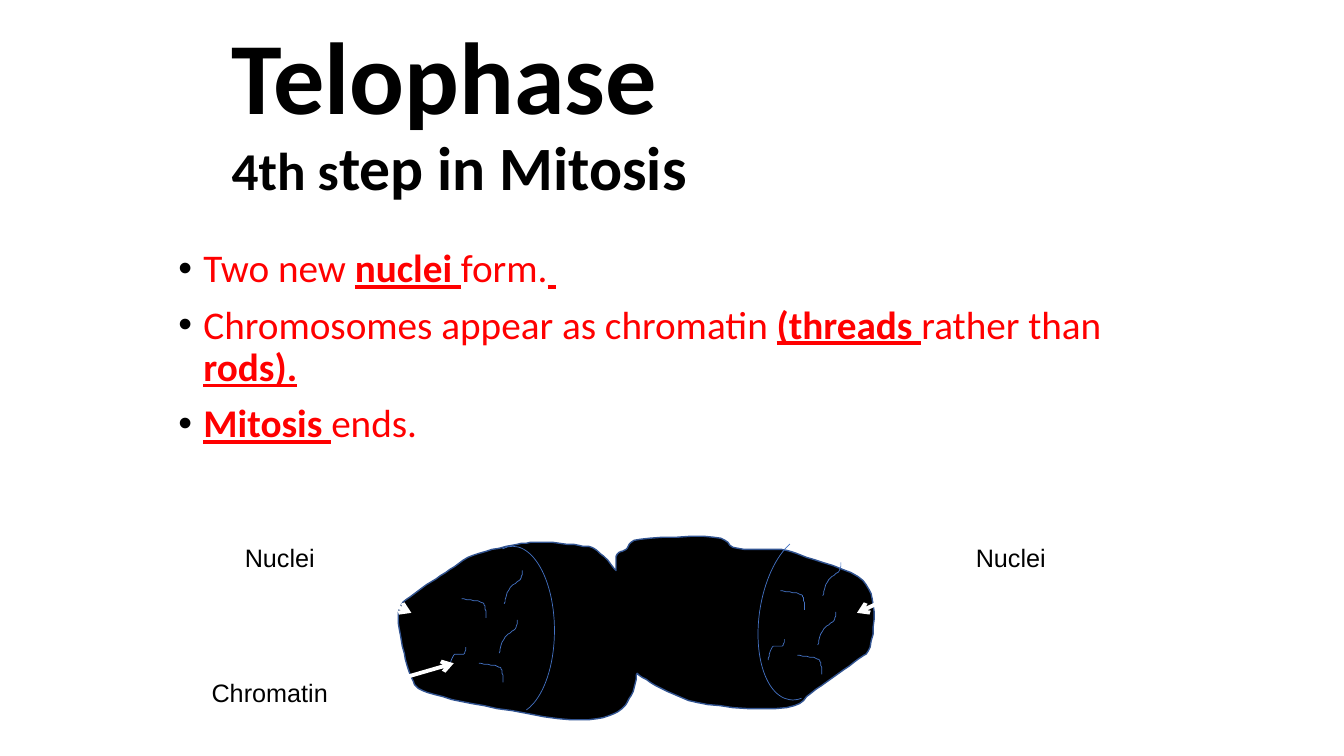
from lxml import etree
from pptx import Presentation, util as u
from pptx.dml.color import RGBColor
from pptx.enum import shapes, text
from pptx.oxml.ns import qn

COLOURS = {"black": "000000", "red": "FF0000", "white": "FFFFFF",
           "membrane": "325491", "thread": "4472C4"}

HEADING = {"name": "Calibri", "bold": True}
PLAIN = {"name": "Calibri", "size": u.Pt(28)}
MARKED = {**PLAIN, "bold": True, "underline": True}
LABEL = {"name": "Arial", "size": u.Pt(18)}

TITLE_LINES = [[("Telophase ", 73)], [("4th s", 38), ("tep in Mitosis", 44)]]
FACTS = [
    [("Two new ", PLAIN), ("nuclei ", MARKED), ("form.", PLAIN), (" ", MARKED)],
    [("Chromosomes appear as chromatin ", PLAIN), ("(threads ", MARKED),
     ("rather than ", PLAIN), ("rods).", MARKED)],
    [("Mitosis ", MARKED), ("ends.", PLAIN)],
]

# Drawn outlines are in hundredths of an inch: smooth curves through key points.
# The two lobes of the dividing cell meet in sharp corners at the pinch.
PINCH_TOP, PINCH_BOTTOM = (611, 566), (632, 668)
LEFT_LOBE = [
    PINCH_TOP, (592, 546), (574, 541), (535, 538), (508, 541), (469, 551),
    (442, 568), (415, 586), (396, 604), (398, 635), (408, 672), (424, 687),
    (480, 700), (566, 714), (609, 708), (626, 690), PINCH_BOTTOM,
]
RIGHT_LOBE = [
    PINCH_BOTTOM, (656, 683), (702, 699), (780, 702), (809, 684), (847, 657),
    (863, 642), (866, 600), (851, 572), (800, 553), (775, 545), (732, 544),
    (708, 533), (635, 535), (621, 545), (612, 550), PINCH_TOP,
]

# Each chromatin thread starts at (0, 0); a nucleus holds five of them.
BEND = [(0, 0), (18, 3), (23, 8), (24, 19)]
HOOK = [(0, 0), (4, -13), (14, -14), (16, -21)]
STEP = [(0, 0), (6, -16), (16, -24), (18, -33)]
NUCLEUS_THREADS = [(BEND, 458, 594), (BEND, 475, 658), (HOOK, 446, 663),
                   (STEP, 495, 648), (STEP, 500, 599)]
LEFT_NUCLEUS, RIGHT_NUCLEUS = (0, 0), (316, -8)

# Nuclear membranes: place, arc angles, rotation.
MEMBRANES = [((4.67, 5.42, 0.83, 1.67), (157.74, 48.1), 0),
             ((7.53, 5.3, 0.84, 1.65), (157.11, 43.64), 188.2)]

# Each label: words, place, wrap, and the two ends of its arrow.
LABELS = [
    ("Nuclei", (9.58, 5.33, 0.9, 0.4), False, (9.58, 5.58, 8.5, 6.08)),
    ("Nuclei", (2.33, 5.33, 0.9, 0.4), False, (3.17, 5.67, 4.08, 6.08)),
    ("Chromatin", (2, 6.67, 1.42, 0.4), True, (3.33, 6.92, 4.5, 6.58)),
]


def inch(value):
    return u.Cm(value * 2.54)


def colour(name):
    return RGBColor.from_string(COLOURS[name])


def smooth(points, steps=6):
    """Return points along a Catmull-Rom curve that passes through all points."""
    padded = [points[0], *points, points[-1]]
    curve = [points[0]]
    for before, start, end, after in zip(padded, padded[1:], padded[2:], padded[3:]):
        for step in range(1, steps + 1):
            t = step / steps
            curve.append(tuple(
                b + ((c - a) * t + (2 * a - 5 * b + 4 * c - d) * t ** 2
                     + (3 * b - a - 3 * c + d) * t ** 3) / 2
                for a, b, c, d in zip(before, start, end, after)))
    return curve


def add_box(page, place, wrap=True):
    frame = page.shapes.add_textbox(*map(inch, place)).text_frame
    frame.word_wrap = wrap
    return frame


def add_span(para, words, tint, formats):
    span = para.add_run()
    span.text = words
    span.font.color.rgb = colour(tint)
    for name, value in formats.items():
        setattr(span.font, name, value)


def set_indent(para, margin, first_line=0):
    properties = para._p.get_or_add_pPr()
    properties.set("marL", str(inch(margin)))
    properties.set("indent", str(inch(first_line)))
    para.line_spacing = 0.9


def add_bullet(para):
    properties = para._p.get_or_add_pPr()
    tint = etree.SubElement(properties, qn("a:buClr"))
    etree.SubElement(tint, qn("a:srgbClr"), val=COLOURS["black"])
    etree.SubElement(properties, qn("a:buFont"), typeface="Arial")
    etree.SubElement(properties, qn("a:buChar"), char="•")


def add_title(page):
    frame = add_box(page, (1.67, 0.17, 10, 1.94))
    frame.vertical_anchor = text.MSO_ANCHOR.MIDDLE
    para = frame.paragraphs[0]
    set_indent(para, 0.53)
    for index, line in enumerate(TITLE_LINES):
        if index:
            para.add_line_break()
        for words, size in line:
            add_span(para, words, "black", {**HEADING, "size": u.Pt(size)})


def add_facts(page):
    frame = add_box(page, (1.67, 2.42, 10, 2.75))
    for index, fact in enumerate(FACTS):
        para = frame.add_paragraph() if index else frame.paragraphs[0]
        set_indent(para, 0.25, -0.25)
        para.space_before = u.Pt(10)
        add_bullet(para)
        for words, formats in fact:
            add_span(para, words, "red", formats)


def style_shape(shape, line, width, fill=None):
    shape.shadow.inherit = False
    shape.line.color.rgb = colour(line)
    shape.line.width = u.Pt(width)
    if fill:
        shape.fill.solid()
        shape.fill.fore_color.rgb = colour(fill)
    else:
        shape.fill.background()


def add_outline(page, points, closed=False):
    builder = page.shapes.build_freeform(*points[0], scale=inch(0.01))
    builder.add_line_segments(points[1:], close=closed)
    return builder.convert_to_shape()


def add_cell(page):
    cell = add_outline(page, smooth(LEFT_LOBE) + smooth(RIGHT_LOBE), closed=True)
    style_shape(cell, "membrane", 1, "black")


def add_membrane(page, place, angles, rotation):
    arc = page.shapes.add_shape(shapes.MSO_SHAPE.ARC, *map(inch, place))
    arc.adjustments[0], arc.adjustments[1] = angles
    arc.rotation = rotation
    style_shape(arc, "thread", 0.5)


def add_chromatin(page, nucleus):
    shift_x, shift_y = nucleus
    for thread, left, top in NUCLEUS_THREADS:
        points = [(left + shift_x + x, top + shift_y + y) for x, y in smooth(thread)]
        style_shape(add_outline(page, points), "thread", 0.5)


def add_arrow(page, ends):
    arrow = page.shapes.add_connector(shapes.MSO_CONNECTOR.STRAIGHT,
                                      *map(inch, ends))
    arrow.line.color.rgb = colour("white")
    arrow.line.width = u.Pt(2.75)
    etree.SubElement(arrow.line._get_or_add_ln(), qn("a:tailEnd"), type="arrow")
    etree.SubElement(arrow._element.spPr, qn("a:effectLst"))


def add_label(page, words, place, wrap, arrow_ends):
    add_arrow(page, arrow_ends)
    add_span(add_box(page, place, wrap).paragraphs[0], words, "black", LABEL)


def main():
    deck = Presentation()
    deck.slide_width, deck.slide_height = inch(13.33), inch(7.5)
    page = deck.slides.add_slide(deck.slide_layouts[6])
    add_title(page)
    add_facts(page)
    add_cell(page)
    for membrane in MEMBRANES:
        add_membrane(page, *membrane)
    for nucleus in (LEFT_NUCLEUS, RIGHT_NUCLEUS):
        add_chromatin(page, nucleus)
    for label in LABELS:
        add_label(page, *label)
    deck.save("out.pptx")


if __name__ == "__main__":
    main()
